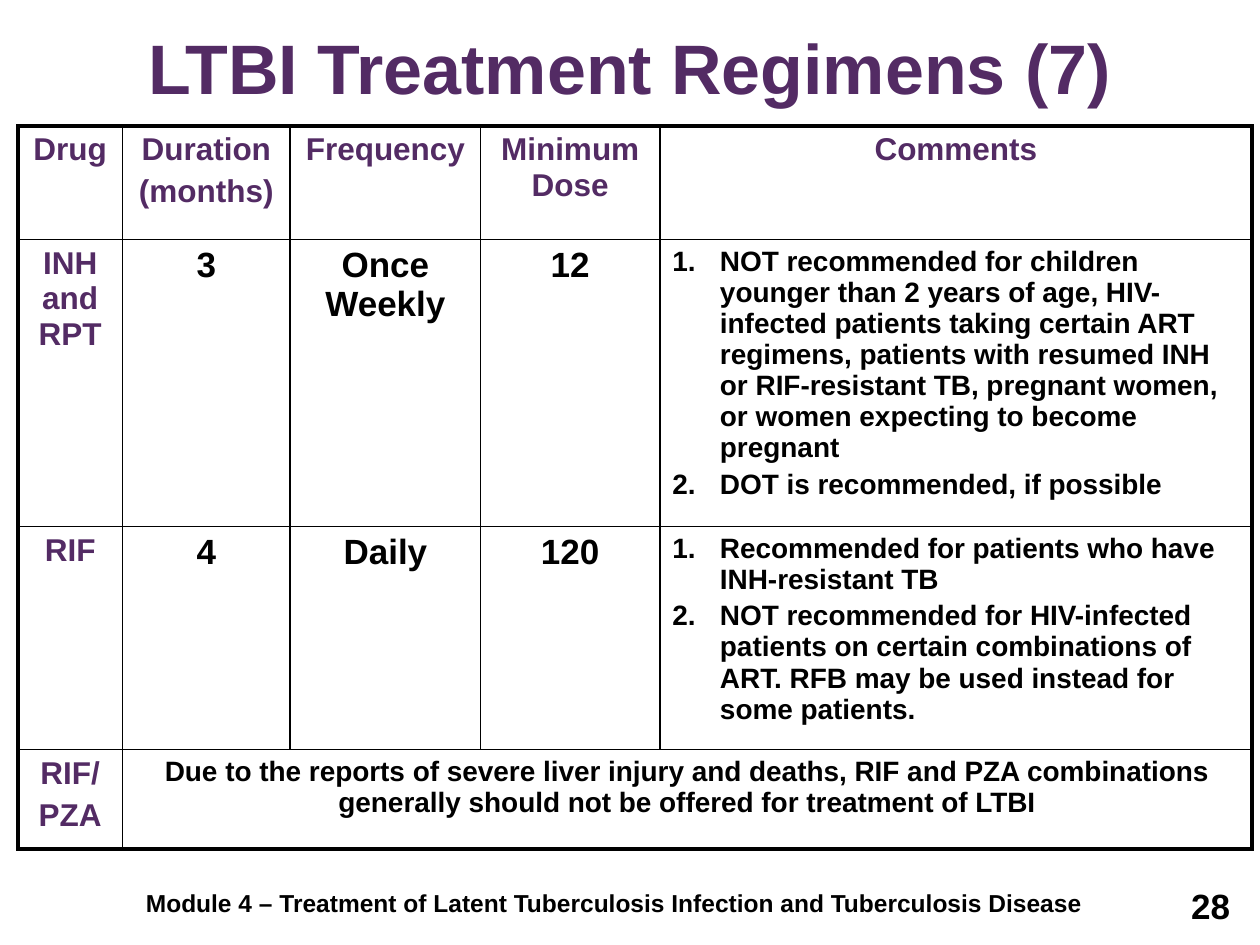
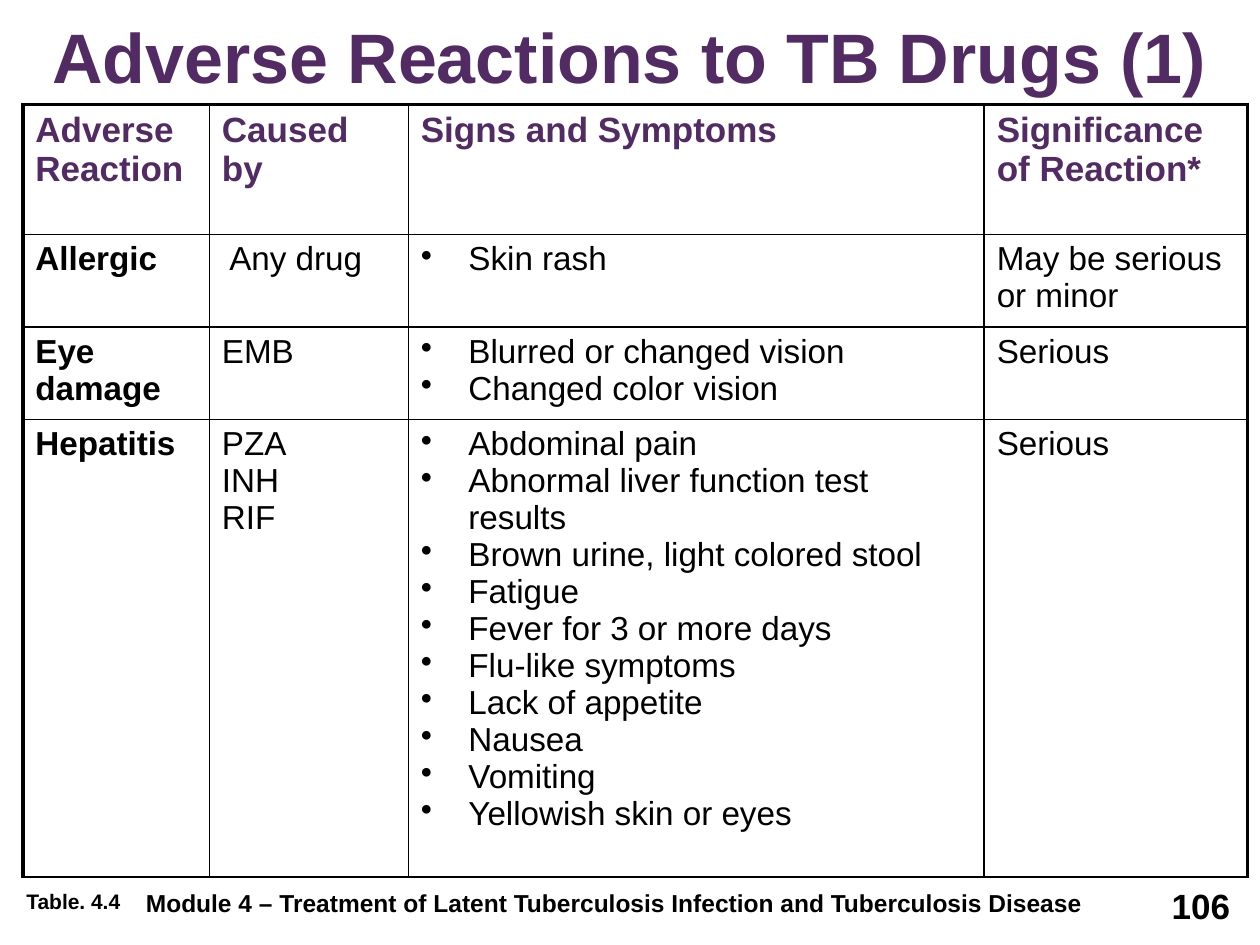
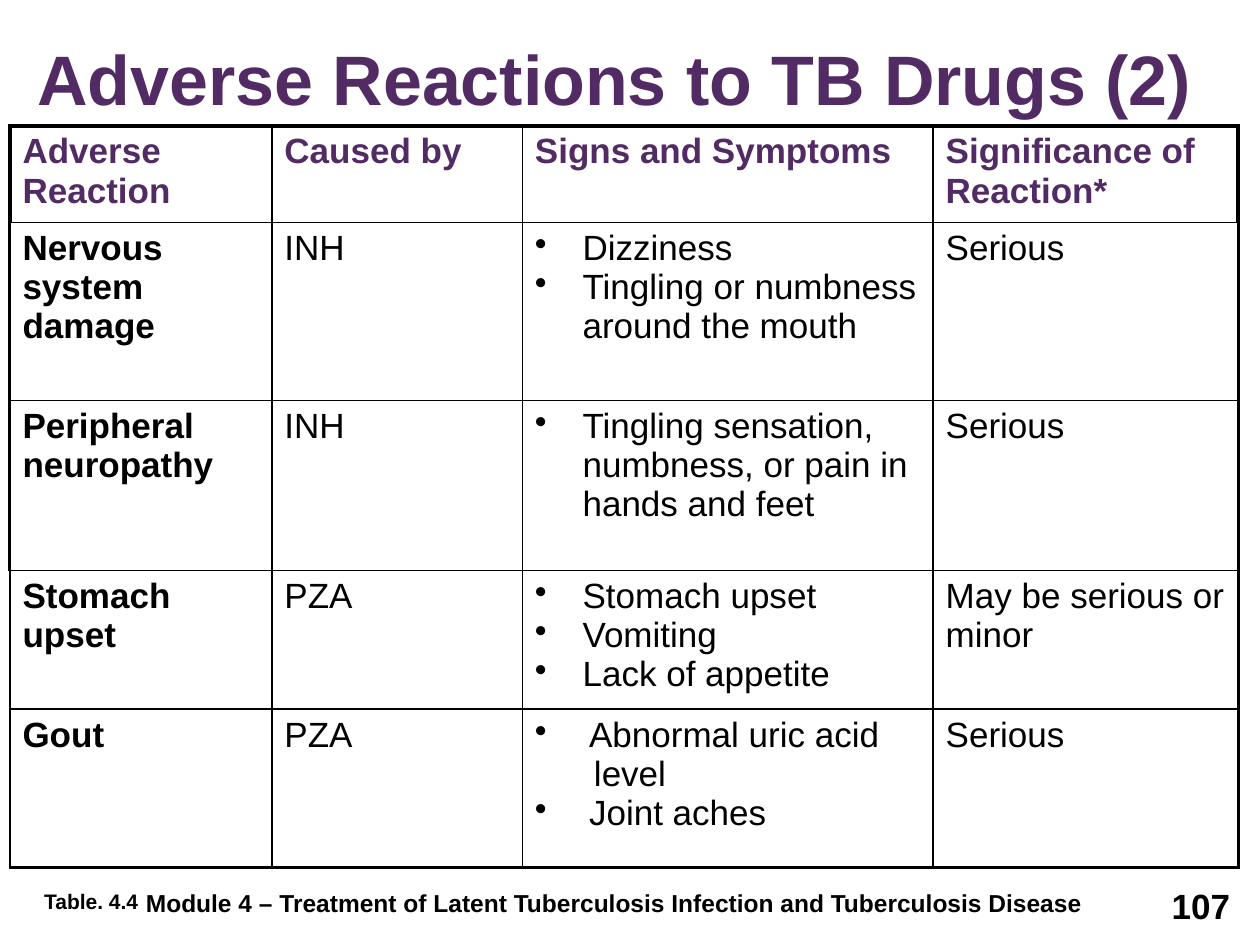
from dataclasses import dataclass, replace

import lxml.etree
import pptx
import pptx.dml.color
import pptx.enum.text
import pptx.oxml.ns
import pptx.util

ALIGN = pptx.enum.text.PP_ALIGN
ANCHOR = pptx.enum.text.MSO_ANCHOR
Cm = pptx.util.Cm

PURPLE = "532B64"
BLACK = "000000"
FONT = "Arial"
THIN = 1.0
HEAVY = 2.25
HANGING = 0.96
MODULE = "Module 4 – Treatment of Latent Tuberculosis Infection and Tuberculosis Disease"


@dataclass(frozen=True)
class Look:
    size: int
    colour: str = BLACK
    bold: bool = True
    align: ALIGN = ALIGN.LEFT
    bullet: str = ""
    spacing: float = 0


@dataclass(frozen=True)
class Line:
    text: str
    left: float | None = None
    bulleted: bool = True


@dataclass(frozen=True)
class Cell:
    lines: tuple[str | Line, ...]
    look: Look | None = None
    columns: int = 1


@dataclass(frozen=True)
class Box:
    left: float
    top: float
    width: float
    height: float
    anchor: ANCHOR = ANCHOR.TOP


@dataclass(frozen=True)
class Grid:
    left: float
    top: float
    widths: tuple[float, ...]
    heights: tuple[float, ...]
    header: Look
    looks: tuple[Look, ...]
    rows: tuple[tuple[Cell, ...], ...]
    side: float = HEAVY
    bottom: float = HEAVY
    thin_left_from: int = 99


@dataclass(frozen=True)
class Page:
    number: int
    title: str
    title_box: Box
    grid: Grid
    label_left: float | None = None


TITLE = Look(40, PURPLE, align=ALIGN.CENTER)
FOOTER = Look(14, align=ALIGN.CENTER)
NUMBER = Look(20, align=ALIGN.RIGHT)
LABEL = Look(12, align=ALIGN.CENTER)
FOOTER_BOX = Box(0, 17.78, 24.77, 0.69)
NUMBER_BOX = Box(19.13, 17.7, 5.92, 1.32)

DRUG = Look(18, PURPLE, align=ALIGN.CENTER, spacing=3.6)
DOSE = Look(20, align=ALIGN.CENTER)
COMMENT = Look(16, bullet="arabicPeriod", spacing=3.2)
WARNING = Look(16, align=ALIGN.CENTER)
REACTION_HEADER = Look(20, PURPLE)


def reaction_looks(size: int) -> tuple[Look, ...]:
    plain = Look(size, bold=False)
    return Look(size), plain, replace(plain, bullet="•"), plain


def cell(*lines: str | Line) -> Cell:
    return Cell(lines)


REGIMENS = Grid(
    0.36, 2.54, (2.11, 3.38, 3.84, 3.61, 11.94), (2.29, 5.38, 4.5, 2.0),
    DRUG, (DRUG, DOSE, DOSE, DOSE, COMMENT),
    (
        (cell("Drug"), cell("Duration", "(months)"), cell("Frequency"),
         cell("Minimum Dose"), cell("Comments")),
        (cell("INH and RPT"), cell("3"), cell("Once Weekly"), cell("12"),
         cell("NOT recommended for children younger than 2 years of age, "
              "HIV-infected patients taking certain ART regimens, patients with "
              "resumed INH or RIF-resistant TB, pregnant women, or women "
              "expecting to become pregnant",
              "DOT is recommended, if possible")),
        (cell("RIF"), cell("4"), cell("Daily"), cell("120"),
         cell("Recommended for patients who have INH-resistant TB",
              "NOT recommended for HIV-infected patients on certain combinations "
              "of ART. RFB may be used instead for some patients.")),
        (cell("RIF/", "PZA"),
         Cell(("Due to the reports of severe liver injury and deaths, RIF and PZA "
               "combinations generally should not be offered for treatment of LTBI",),
              WARNING, 4)),
    ),
)

REACTIONS_1 = Grid(
    0.46, 2.11, (3.76, 4.01, 11.61, 5.31), (2.62, 1.73, 1.73, 9.22),
    REACTION_HEADER, reaction_looks(19),
    (
        (cell("Adverse", "Reaction"), cell("Caused by"),
         cell("Signs and Symptoms"), cell("Significance", "of Reaction*")),
        (cell("Allergic"), cell(Line("Any drug", 0.15)), cell("Skin rash"),
         cell("May be serious or minor")),
        (cell("Eye", "damage"), cell("EMB"),
         cell("Blurred or changed vision", "Changed color vision"), cell("Serious")),
        (cell("Hepatitis"), cell("PZA", "INH", "RIF"),
         cell("Abdominal pain", "Abnormal liver function test results",
              "Brown urine, light colored stool", "Fatigue",
              "Fever for 3 or more days", "Flu-like symptoms", "Lack of appetite",
              "Nausea", "Vomiting", "Yellowish skin or eyes"),
         cell("Serious")),
    ),
    bottom=THIN,
)

REACTIONS_2 = Grid(
    0.2, 2.54, (5.28, 5.05, 8.28, 6.15), (1.83, 3.58, 3.43, 2.62, 3.2),
    REACTION_HEADER, reaction_looks(20),
    (
        (cell("Adverse", "Reaction"), cell("Caused by"),
         cell("Signs and Symptoms"), cell("Significance of", "Reaction*")),
        (cell("Nervous system damage"), cell("INH"),
         cell("Dizziness", "Tingling or numbness around the mouth"), cell("Serious")),
        (cell("Peripheral", "neuropathy"), cell("INH"),
         cell("Tingling sensation, numbness, or pain in hands and feet"),
         cell("Serious")),
        (cell("Stomach upset"), cell("PZA"),
         cell("Stomach upset", "Vomiting", "Lack of appetite"),
         cell("May be serious or minor")),
        (cell("Gout"), cell("PZA"),
         cell(Line("Abnormal uric acid", 1.09), Line("level", 1.19, False),
              Line("Joint aches", 1.09)),
         cell("Serious")),
    ),
    side=2, bottom=2, thin_left_from=3,
)

PAGES = (
    Page(28, "LTBI Treatment Regimens (7)", Box(0.84, 0.2, 23.7, 2.11, ANCHOR.BOTTOM),
         REGIMENS),
    Page(106, "Adverse Reactions to TB Drugs (1)",
         Box(0.2, 0.2, 24.97, 1.9, ANCHOR.BOTTOM), REACTIONS_1, -0.64),
    Page(107, "Adverse Reactions to TB Drugs (2)",
         Box(0, 0.84, 24.77, 1.7, ANCHOR.BOTTOM), REACTIONS_2, -0.28),
)


def colour(value: str) -> pptx.dml.color.RGBColor:
    return pptx.dml.color.RGBColor.from_string(value)


def add_child(parent, tag: str, **attributes: str):
    return lxml.etree.SubElement(parent, pptx.oxml.ns.qn(tag), attributes)


def set_indent(para, line: Line, look: Look) -> None:
    properties = para._p.get_or_add_pPr()
    marked = bool(look.bullet) and line.bulleted
    left = line.left if line.left is not None else HANGING if marked else 0
    properties.set("marL", str(int(Cm(left))))
    properties.set("indent", str(int(Cm(-left if marked else 0))))
    if not marked:
        add_child(properties, "a:buNone")
    elif look.bullet == "•":
        add_child(properties, "a:buChar", char=look.bullet)
    else:
        add_child(properties, "a:buAutoNum", type=look.bullet)


def write_lines(frame, lines: tuple[str | Line, ...], look: Look) -> None:
    frame.word_wrap = True
    for index, item in enumerate(lines):
        line = Line(item) if isinstance(item, str) else item
        para = frame.add_paragraph() if index else frame.paragraphs[0]
        para.alignment = look.align
        para.space_before = pptx.util.Pt(look.spacing if index else 0)
        set_indent(para, line, look)
        span = para.add_run()
        span.text = line.text
        formats = {"name": FONT, "size": pptx.util.Pt(look.size), "bold": look.bold}
        for name, value in formats.items():
            setattr(span.font, name, value)
        span.font.color.rgb = colour(look.colour)


def add_text(slide, box: Box, text: str, look: Look) -> None:
    lengths = (Cm(n) for n in (box.left, box.top, box.width, box.height))
    frame = slide.shapes.add_textbox(*lengths).text_frame
    frame.vertical_anchor = box.anchor
    write_lines(frame, (text,), look)


def set_borders(target, widths: dict[str, float]) -> None:
    properties = target._tc.get_or_add_tcPr()
    for index, (edge, width) in enumerate(widths.items()):
        border = add_child(properties, f"a:ln{edge}", w=str(int(pptx.util.Pt(width))))
        fill = add_child(border, "a:solidFill")
        add_child(fill, "a:srgbClr", val=BLACK)
        properties.insert(index, border)


def edge_widths(grid: Grid, row: int, column: int) -> dict[str, float]:
    side = grid.side if row else HEAVY
    left = THIN if row >= grid.thin_left_from else side
    return {
        "L": left if column == 0 else THIN,
        "R": side if column == len(grid.widths) - 1 else THIN,
        "T": HEAVY if row == 0 else THIN,
        "B": grid.bottom if row == len(grid.heights) - 1 else THIN,
    }


def add_grid(slide, grid: Grid) -> None:
    table = slide.shapes.add_table(
        len(grid.heights), len(grid.widths), Cm(grid.left), Cm(grid.top),
        Cm(sum(grid.widths)), Cm(sum(grid.heights))).table
    for name in ("first_row", "horz_banding"):
        setattr(table, name, False)
    for column, width in zip(table.columns, grid.widths):
        column.width = Cm(width)
    for row, height in zip(table.rows, grid.heights):
        row.height = Cm(height)
    for r, cells in enumerate(grid.rows):
        for c in range(len(grid.widths)):
            target = table.cell(r, c)
            target.fill.background()
            widths = edge_widths(grid, r, c)
            if c < len(cells):
                entry = cells[c]
                last = c + entry.columns - 1
                widths["R"] = edge_widths(grid, r, last)["R"]
                if entry.columns > 1:
                    target.merge(table.cell(r, last))
                look = entry.look or (grid.looks[c] if r else grid.header)
                write_lines(target.text_frame, entry.lines, look)
            set_borders(target, widths)


def add_page(deck, page: Page) -> None:
    slide = deck.slides.add_slide(deck.slide_layouts[6])
    add_text(slide, FOOTER_BOX, MODULE, FOOTER)
    add_text(slide, NUMBER_BOX, str(page.number), NUMBER)
    add_text(slide, page.title_box, page.title, TITLE)
    add_grid(slide, page.grid)
    if page.label_left is not None:
        label_box = Box(page.label_left, 17.78, 4.24, 0.76, ANCHOR.BOTTOM)
        add_text(slide, label_box, "Table. 4.4", LABEL)


def main() -> None:
    deck = pptx.Presentation()
    for name, value in {"slide_width": Cm(25.4), "slide_height": Cm(19.05)}.items():
        setattr(deck, name, value)
    for page in PAGES:
        add_page(deck, page)
    deck.save("out.pptx")


if __name__ == "__main__":
    main()
